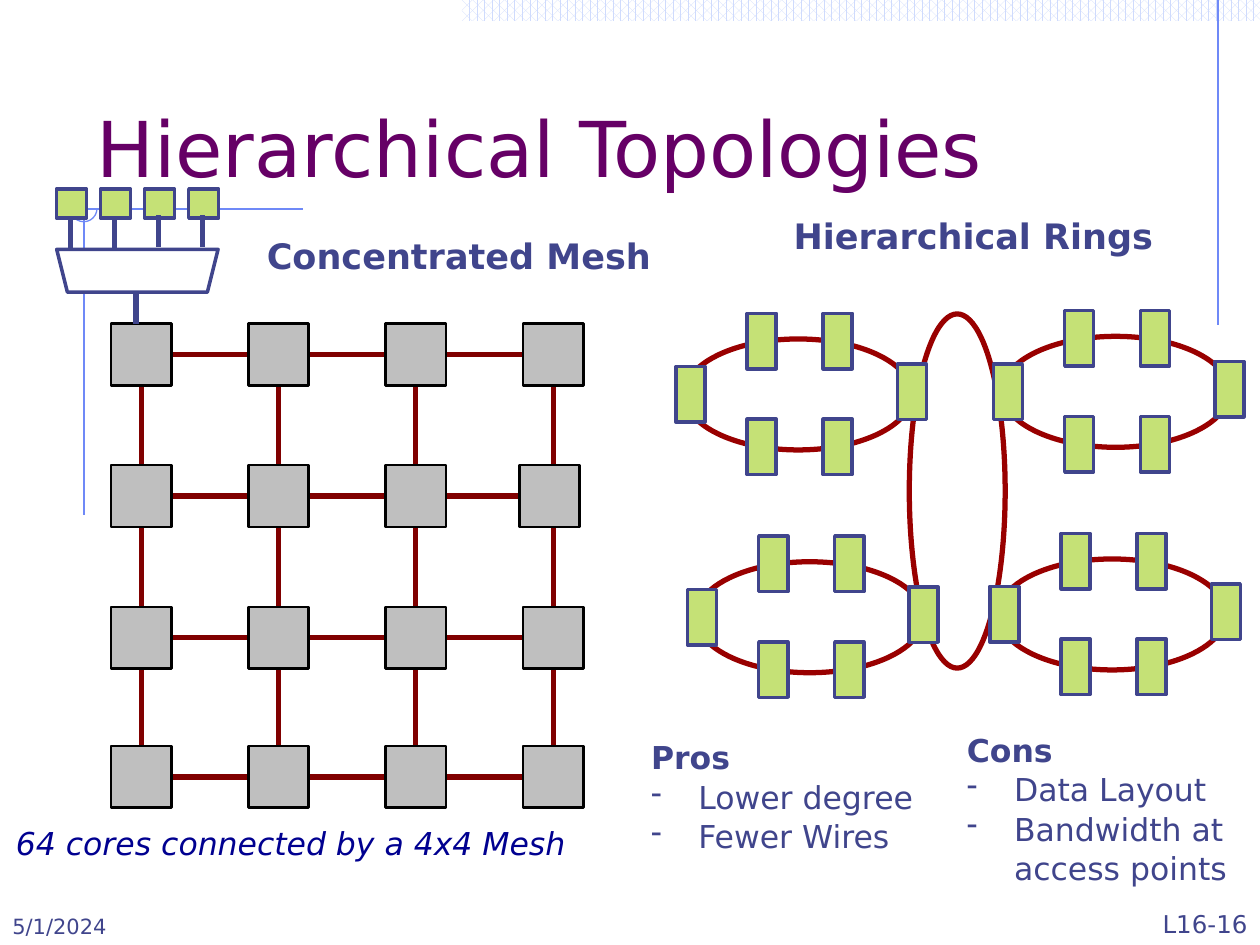
from dataclasses import dataclass

from lxml import etree
from pptx import Presentation
from pptx.dml.color import RGBColor
from pptx.enum import dml, shapes, text
from pptx.oxml.ns import qn
from pptx.util import Pt


@dataclass(frozen=True)
class Theme:
    font: str = "DejaVu Sans"
    title: str = "660066"
    ink: str = "40458C"
    caption: str = "000090"
    core: str = "C5E176"
    router: str = "BFBFBF"
    router_edge: str = "000000"
    mesh_link: str = "800000"
    ring: str = "990000"
    paper: str = "FFFFFF"
    band: str = "CFDBFD"
    rule: str = "6F89F7"
    title_size: float = 44
    heading_size: float = 20
    body_size: float = 18
    page_size: float = 14
    date_size: float = 12
    hairline: float = 0.75
    thin: float = 1.5
    medium: float = 2
    thick: float = 3


class SlideBuilder:
    def __init__(self, slide, theme):
        self.slide = slide
        self.theme = theme

    def shape(self, kind, x, y, w, h, line=None, width=1, fill=None):
        sp = self.slide.shapes.add_shape(kind, Pt(x), Pt(y), Pt(w), Pt(h))
        sp.shadow.inherit = False
        if fill:
            sp.fill.solid()
            sp.fill.fore_color.rgb = RGBColor.from_string(fill)
        else:
            sp.fill.background()
        if line:
            sp.line.color.rgb = RGBColor.from_string(line)
            sp.line.width = Pt(width)
        else:
            sp.line.fill.background()
        return sp

    def line(self, x1, y1, x2, y2, color, width):
        cxn = self.slide.shapes.add_connector(
            shapes.MSO_CONNECTOR.STRAIGHT, Pt(x1), Pt(y1), Pt(x2), Pt(y2))
        cxn.line.color.rgb = RGBColor.from_string(color)
        cxn.line.width = Pt(width)
        etree.SubElement(cxn._element.spPr, qn("a:effectLst"))

    def core(self, x, y, w, h):
        self.shape(shapes.MSO_SHAPE.RECTANGLE, x, y, w, h,
                   self.theme.ink, self.theme.medium, self.theme.core)

    def style(self, p, size, color, bold=False, italic=False):
        for r in p.runs:
            r.font.name = self.theme.font
            r.font.size = Pt(size)
            r.font.bold = bold
            r.font.italic = italic
            r.font.color.rgb = RGBColor.from_string(color)

    def text(self, x, y, w, h, words, size, color, bold=False, italic=False,
             bottom=False, right=False):
        sp = self.slide.shapes.add_textbox(Pt(x), Pt(y), Pt(w), Pt(h))
        tf = sp.text_frame
        tf.word_wrap = True
        if bottom:
            tf.vertical_anchor = text.MSO_ANCHOR.BOTTOM
        tf.text = words
        p = tf.paragraphs[0]
        if right:
            p.alignment = text.PP_ALIGN.RIGHT
        self.style(p, size, color, bold, italic)
        return tf

    def dash_list(self, x, y, w, h, heading, items):
        size, ink = self.theme.body_size, self.theme.ink
        tf = self.text(x, y, w, h, heading, size, ink, bold=True)
        for item in items:
            p = tf.add_paragraph()
            pPr = p._p.get_or_add_pPr()
            pPr.set("marL", str(Pt(27)))
            pPr.set("indent", str(-Pt(27)))
            etree.SubElement(pPr, qn("a:buChar")).set("char", "-")
            p.text = item
            self.style(p, size, ink)
        for p in tf.paragraphs:
            p.line_spacing = 1.04

    def backdrop(self):
        t = self.theme
        band = self.shape(shapes.MSO_SHAPE.RECTANGLE, 264, 0, 456, 12)
        band.fill.patterned()
        band.fill.pattern = dml.MSO_PATTERN.PERCENT_60
        band.fill.fore_color.rgb = RGBColor.from_string(t.band)
        band.fill.back_color.rgb = RGBColor.from_string(t.paper)
        for ends in ((696, 0, 696, 186), (173, 119.5, 32.4, 119.5),
                     (48, 111.6, 48, 294.5)):
            self.line(*ends, t.rule, t.hairline)
        arc = self.shape(shapes.MSO_SHAPE.ARC, 40.3, 111.6, 15.1, 15.1,
                         t.rule, t.hairline)
        arc.adjustments[0] = 0
        arc.adjustments[1] = 162  # 270 degrees

    def mesh(self):
        t = self.theme
        w, h = 34.5, 35.3
        lefts = [63.4 + 78.5 * col for col in range(4)]
        tops = [185, 265.8, 346.8, 426.3]
        for y in tops:
            self.line(lefts[0] + w, y + h / 2, lefts[-1], y + h / 2,
                      t.mesh_link, t.thick)
        for x in lefts:
            self.line(x + w / 2, tops[0] + h, x + w / 2, tops[-1],
                      t.mesh_link, t.thick)
        for row, y in enumerate(tops):
            for col, x in enumerate(lefts):
                nudge = -2.2 if (row, col) == (1, 3) else 0
                self.shape(shapes.MSO_SHAPE.RECTANGLE, x + nudge, y, w, h,
                           t.router_edge, t.thin, t.router)

    def concentrator(self):
        """Four cores sharing the first mesh router."""
        t = self.theme
        pitch = 25.2
        for i in range(4):
            self.core(32.2 + pitch * i, 108, 17.2, 16.6)
        mux = self.shape(shapes.MSO_SHAPE.TRAPEZOID, 32.4, 142.5, 92.2, 24.5,
                         t.ink, t.medium, t.paper)
        mux.rotation = 180
        self.line(77.8, 167, 77.8, 185, t.ink, t.thick)
        for i, y in enumerate((124.6, 124.6, 123.1, 123.1)):
            x = 40.3 + pitch * i
            self.line(x, y, x, y + 18, t.ink, t.thick)

    def local_ring(self, x, y):
        self.shape(shapes.MSO_SHAPE.OVAL, x, y, 130.2, 63.4,
                   self.theme.ring, self.theme.thick)
        for dx, dy in ((-4.8, 15.8), (36, -14.6), (79.4, -14.6),
                       (36, 45.8), (79.4, 45.8), (121.8, 14.4)):
            self.core(x + dx, y + dy, 16.6, 31.7)


def main():
    t = Theme()
    prs = Presentation()
    prs.slide_width, prs.slide_height = Pt(720), Pt(540)
    s = SlideBuilder(prs.slides.add_slide(prs.slide_layouts[6]), t)

    s.backdrop()
    s.shape(shapes.MSO_SHAPE.OVAL, 519.6, 179.4, 54.8, 202.4, t.ring, t.thick)
    s.text(48, 24, 615, 90, "Hierarchical Topologies", t.title_size, t.title,
           bottom=True)
    s.mesh()
    s.concentrator()
    for x, y in ((391, 193.7), (572.4, 192.2), (397.6, 321), (570.4, 319.4)):
        s.local_ring(x, y)

    s.text(446.4, 118.8, 224, 31.7, "Hierarchical Rings", t.heading_size,
           t.ink, bold=True)
    s.text(145.4, 130.3, 247.7, 31.7, "Concentrated Mesh", t.heading_size,
           t.ink, bold=True)
    s.text(2, 467.3, 357, 29, "64 cores connected by a 4x4 Mesh", t.body_size,
           t.caption, italic=True)
    s.dash_list(365, 417.6, 224, 72.7, "Pros",
                ["Lower degree", "Fewer Wires"])
    s.dash_list(545.4, 413.3, 174.4, 94.3, "Cons",
                ["Data Layout", "Bandwidth at access points"])
    s.text(0, 504, 150, 36, "5/1/2024", t.date_size, t.ink, bottom=True)
    s.text(570, 504, 150, 36, "L16-16", t.page_size, t.ink, bottom=True,
           right=True)
    prs.save("out.pptx")


if __name__ == "__main__":
    main()
